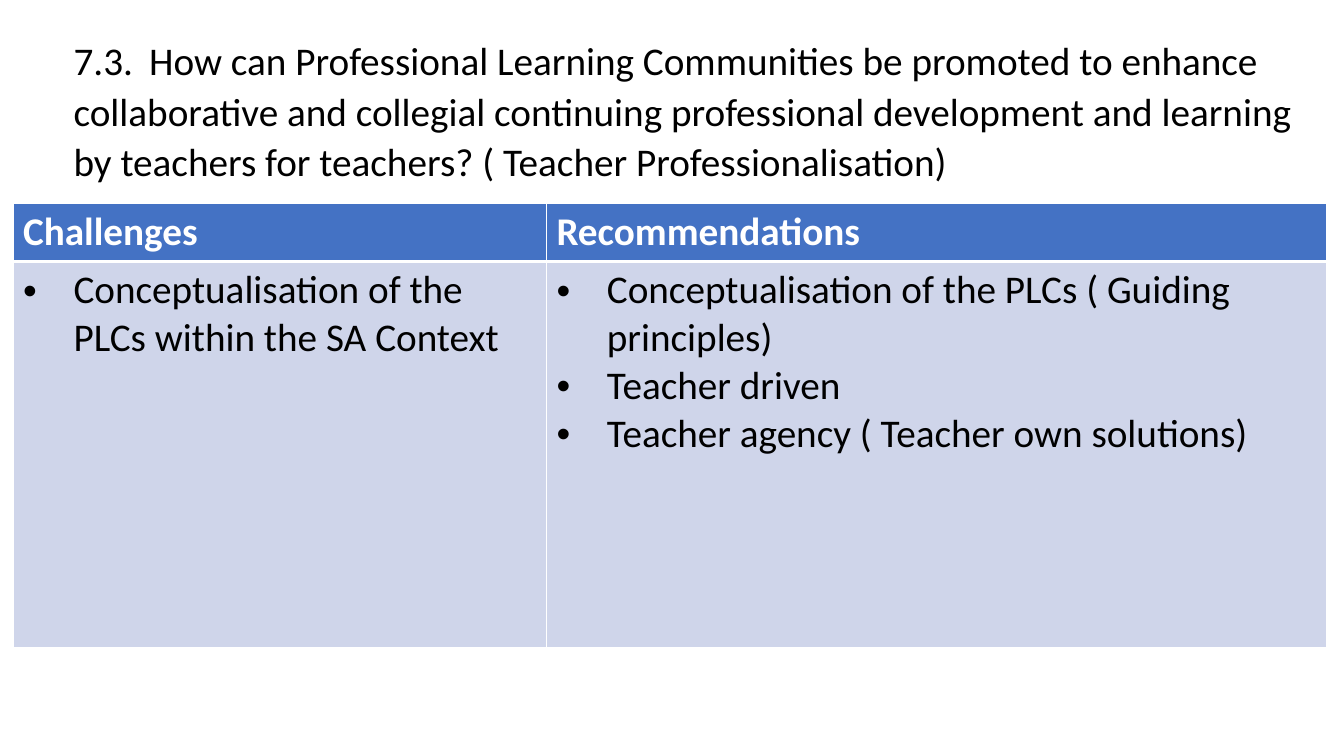
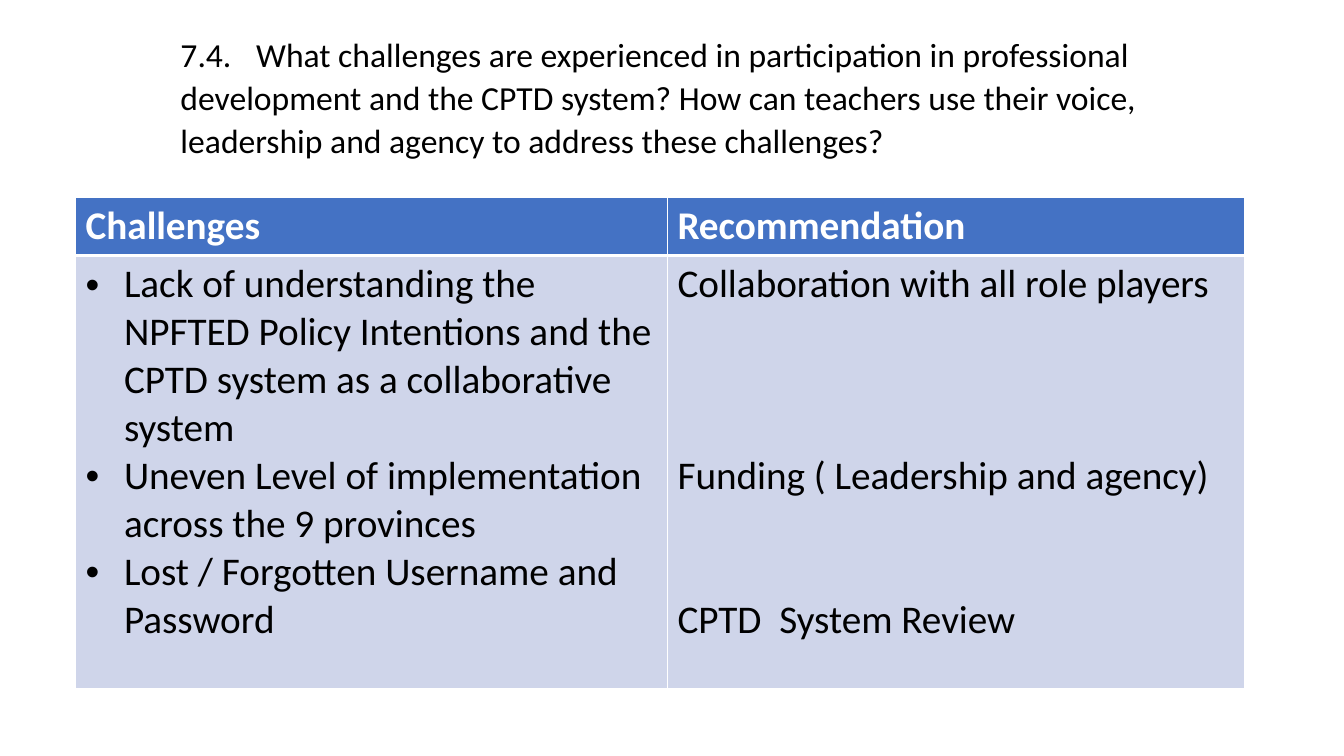
from lxml import etree
from pptx import Presentation
from pptx.dml.color import RGBColor as RGB
from pptx.enum.text import MSO_ANCHOR as ANCHOR, MSO_AUTO_SIZE as FIT, PP_ALIGN as ALIGN
from pptx.oxml.ns import qn
from pptx.util import Inches, Pt

COLORS = {"head": "4472C4", "body": "CFD5EA", "line": "FFFFFF", "text": "000000"}
FONT = "Calibri"
SIZE = 28
LINE = 34.2

PAGES = [
    {
        "title": "7.3.\tHow can Professional Learning Communities be promoted to enhance collaborative and collegial continuing professional development and learning by teachers for teachers? ( Teacher Professionalisation)",
        "size": 28,
        "box": (0.13, 0.28, 12.91, 1.59),
        "place": (0.13, 2.02),
        "cols": (5.29, 7.74),
        "rows": (0.57, 3.83),
        "heads": ("Challenges", "Recommendations"),
        "lists": (
            (0.5, [("Conceptualisation of the PLCs within the SA Context", 0)]),
            (0.5, [
                ("Conceptualisation of the PLCs ( Guiding principles)", 0),
                ("Teacher driven", 0),
                ("Teacher agency ( Teacher own solutions)", 0),
            ]),
        ),
    },
    {
        "title": "7.4.\tWhat challenges are experienced in participation in professional development and the CPTD system? How can teachers use their voice, leadership and agency to address these challenges?",
        "size": 24,
        "box": (1.19, 0.26, 11.59, 1.38),
        "place": (0.75, 1.96),
        "cols": (5.87, 5.72),
        "rows": (0.57, 4.3),
        "heads": ("Challenges", "Recommendation"),
        "lists": (
            (0.38, [
                ("Lack of understanding the NPFTED Policy Intentions and the CPTD system as a collaborative system", 0),
                ("Uneven Level of implementation across the 9 provinces", 0),
                ("Lost / Forgotten Username and Password", 0),
            ]),
            (0, [
                ("Collaboration with all role players", 0),
                ("Funding ( Leadership and agency)", 3),
                ("CPTD  System Review", 2),
            ]),
        ),
    },
]


def style(para, size, color, bold=False):
    font = para.font
    font.name = FONT
    font.size = Pt(size)
    font.bold = bold
    font.color.rgb = RGB.from_string(COLORS[color])


def paint(cell, fill, top, base):
    props = cell._tc.get_or_add_tcPr()
    for side, width in (("L", 1), ("R", 1), ("T", top), ("B", base)):
        line = etree.SubElement(props, qn("a:ln" + side), w=str(Pt(width)))
        solid = etree.SubElement(line, qn("a:solidFill"))
        etree.SubElement(solid, qn("a:srgbClr"), val=COLORS["line"])
    cell.fill.solid()
    cell.fill.fore_color.rgb = RGB.from_string(COLORS[fill])


prs = Presentation()
prs.slide_width = Inches(13.33)
prs.slide_height = Inches(7.5)

for page in PAGES:
    slide = prs.slides.add_slide(prs.slide_layouts[5])

    title = slide.shapes.title
    title.left, title.top, title.width, title.height = map(Inches, page["box"])
    frame = title.text_frame
    frame.text = page["title"]
    frame.word_wrap = True
    frame.auto_size = FIT.NONE
    frame.vertical_anchor = ANCHOR.TOP
    para = frame.paragraphs[0]
    para.alignment = ALIGN.LEFT
    para.line_spacing = 1.07
    para.space_after = Pt(7.5)
    props = para._p.get_or_add_pPr()
    props.set("marL", str(Inches(0.5)))
    tabs = etree.SubElement(props, qn("a:tabLst"))
    for stop in (0.75, 1.25):
        etree.SubElement(tabs, qn("a:tab"), pos=str(Inches(stop)), algn="l")
    style(para, page["size"], "text")

    cols, rows = page["cols"], page["rows"]
    area = map(Inches, (*page["place"], sum(cols), sum(rows)))
    table = slide.shapes.add_table(2, 2, *area).table
    for row, height in zip(table.rows, rows):
        row.height = Inches(height)

    for col, width in enumerate(cols):
        table.columns[col].width = Inches(width)
        head, body = table.cell(0, col), table.cell(1, col)
        paint(head, "head", 1, 3)
        paint(body, "body", 3, 1)
        head.text = page["heads"][col]
        style(head.text_frame.paragraphs[0], SIZE, "line", True)

        indent, items = page["lists"][col]
        body.text = "\n".join(text for text, gap in items)
        for para, (text, gap) in zip(body.text_frame.paragraphs, items):
            if gap:
                para.space_before = Pt(gap * LINE)
            if indent:
                props = para._p.get_or_add_pPr()
                props.set("marL", str(Inches(indent)))
                props.set("indent", str(-Inches(indent)))
                etree.SubElement(props, qn("a:buFont"), typeface="Arial")
                etree.SubElement(props, qn("a:buChar"), char="•")
            style(para, SIZE, "text")

prs.save("out.pptx")
